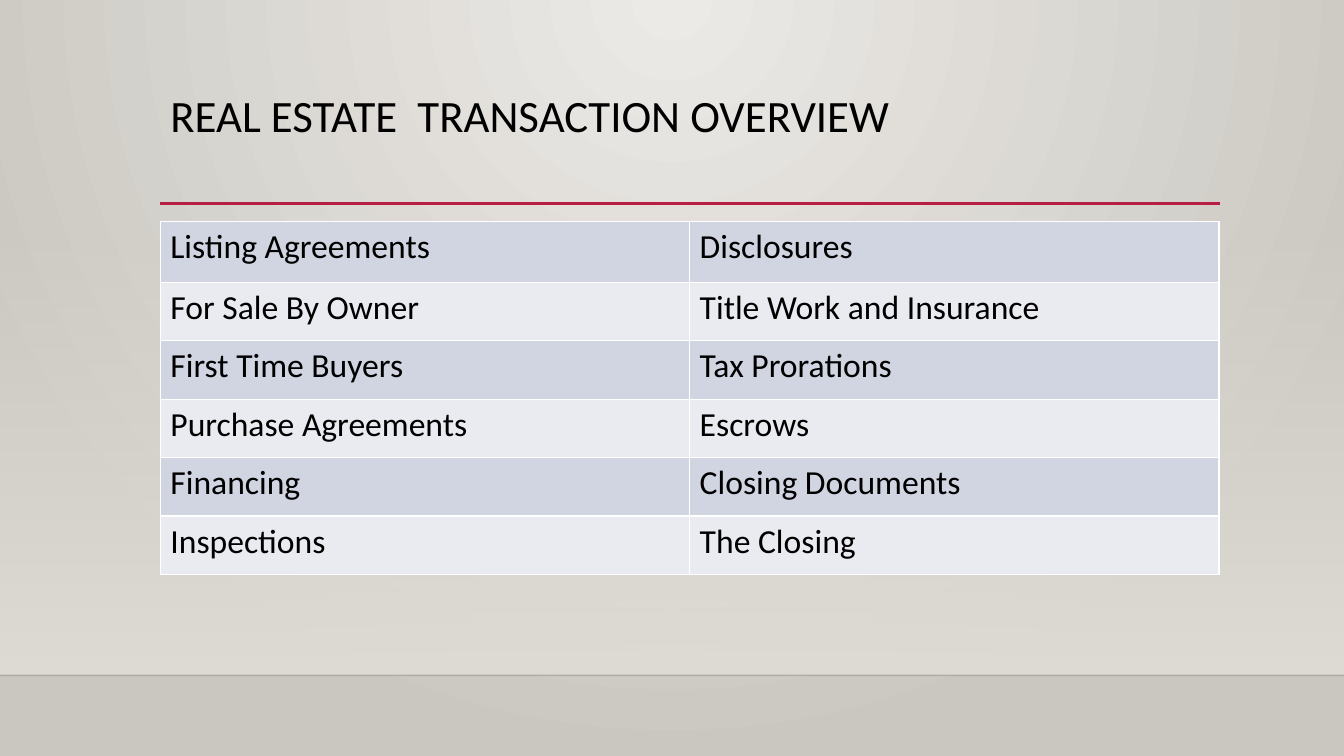
import pptx
import pptx.dml.color
import pptx.enum.shapes
import pptx.enum.text
import pptx.oxml
import pptx.oxml.ns
import pptx.util
from pptx.dml.color import RGBColor
from pptx.util import Inches
import lxml.etree

BLACK = RGBColor(0x00, 0x00, 0x00)
HAIRLINE = RGBColor(0x00, 0x00, 0x01)
CRIMSON = RGBColor(0xB7, 0x1E, 0x42)
WALL_LIGHT = RGBColor(0xEC, 0xEA, 0xE7)
WALL_DARK = RGBColor(0xCA, 0xC7, 0xC1)
GLOW = RGBColor(0xDF, 0xDB, 0xD5)
ROW_FILLS = (RGBColor(0xD1, 0xD5, 0xE1), RGBColor(0xEA, 0xEB, 0xF1))

qn = pptx.oxml.ns.qn
A_NS = 'xmlns:a="http://schemas.openxmlformats.org/drawingml/2006/main"'
TOPICS = [
    ("Listing Agreements", "Disclosures"),
    ("For Sale By Owner", "Title Work and Insurance"),
    ("First Time Buyers", "Tax Prorations"),
    ("Purchase Agreements", "Escrows"),
    ("Financing", "Closing Documents"),
    ("Inspections", "The Closing"),
]


def set_gradient(fill, colors):
    fill.gradient()
    for stop, color, position in zip(fill.gradient_stops, colors, (0, 1)):
        stop.color.rgb = color
        stop.position = position


def set_opacity(element, percent):
    color = element.find(".//" + qn("a:srgbClr"))
    lxml.etree.SubElement(color, qn("a:alpha")).set("val", str(percent * 1000))


deck = pptx.Presentation()
deck.slide_width, deck.slide_height = Inches(13.33), Inches(7.5)
slide = deck.slides.add_slide(deck.slide_layouts[5])

# Background: light spreading from the top centre
set_gradient(slide.background.fill, (WALL_LIGHT, WALL_DARK))
wall = slide.element.find(".//" + qn("a:gradFill"))
wall.remove(wall.find(qn("a:lin")))
wall.append(pptx.oxml.parse_xml(
    f'<a:path {A_NS} path="circle">'
    '<a:fillToRect l="43000" t="0" r="43000" b="100000"/></a:path>'))

# Glow above the floor, fading in downwards
glow = slide.shapes.add_shape(
    pptx.enum.shapes.MSO_SHAPE.RECTANGLE,
    Inches(0), Inches(2.21), Inches(13.33), Inches(4.49))
glow.shadow.inherit = False
glow.line.fill.background()
set_gradient(glow.fill, (GLOW, GLOW))
glow.fill.gradient_angle = 270
set_opacity(glow.element.spPr, 0)

# Floor edge and title rule
for left, right, y, color, width, opacity in (
        (0, 13.33, 6.7, HAIRLINE, 1, 20),
        (1.59, 12.1, 2.02, CRIMSON, 2.5, 100)):
    rule = slide.shapes.add_connector(
        pptx.enum.shapes.MSO_CONNECTOR.STRAIGHT,
        Inches(left), Inches(y), Inches(right), Inches(y))
    rule.line.color.rgb = color
    rule.line.width = pptx.util.Pt(width)
    if opacity < 100:
        set_opacity(rule.element.spPr, opacity)
    lxml.etree.SubElement(rule.element.spPr, qn("a:effectLst"))

# Title
title = slide.shapes.title
title_place = {"left": 1.59, "top": 0.88, "width": 10.5, "height": 1.15}
for name, value in title_place.items():
    setattr(title, name, Inches(value))
title_frame = title.text_frame
title_frame.text = "REAL ESTATE  TRANSACTION OVERVIEW"
title_frame.word_wrap = True
title_frame.auto_size = pptx.enum.text.MSO_AUTO_SIZE.NONE
title_frame.vertical_anchor = pptx.enum.text.MSO_ANCHOR.TOP
heading = title_frame.paragraphs[0]
heading.alignment = pptx.enum.text.PP_ALIGN.LEFT
heading.line_spacing = 0.9
title_format = {"name": "Calibri", "size": pptx.util.Pt(32), "bold": False}
for name, value in title_format.items():
    setattr(heading.runs[0].font, name, value)
heading.runs[0].font.color.rgb = BLACK

# Topic table
topics = slide.shapes.add_table(
    len(TOPICS), 2, Inches(1.59), Inches(2.2), Inches(10.5), Inches(3.5)).table
topics.first_row = False
topics.horz_banding = False
topic_format = {"name": "Calibri", "size": pptx.util.Pt(24), "bold": False}
for row_index, row_topics in enumerate(TOPICS):
    topics.rows[row_index].height = Inches(0.58 if row_index else 0.6)
    for column_index, topic in enumerate(row_topics):
        cell = topics.cell(row_index, column_index)
        cell.text = topic
        cell.fill.solid()
        cell.fill.fore_color.rgb = ROW_FILLS[row_index % 2]
        topic_font = cell.text_frame.paragraphs[0].runs[0].font
        for name, value in topic_format.items():
            setattr(topic_font, name, value)
        topic_font.color.rgb = BLACK
        # White borders go before the fill
        cell_properties = cell.fill.fore_color and cell.text_frame and topics.cell(
            row_index, column_index)._tc.get_or_add_tcPr()
        for position, side in enumerate(("lnL", "lnR", "lnT", "lnB")):
            cell_properties.insert(position, pptx.oxml.parse_xml(
                f'<a:{side} {A_NS} w="12700"><a:solidFill>'
                f'<a:srgbClr val="FFFFFF"/></a:solidFill></a:{side}>'))

deck.save("out.pptx")
